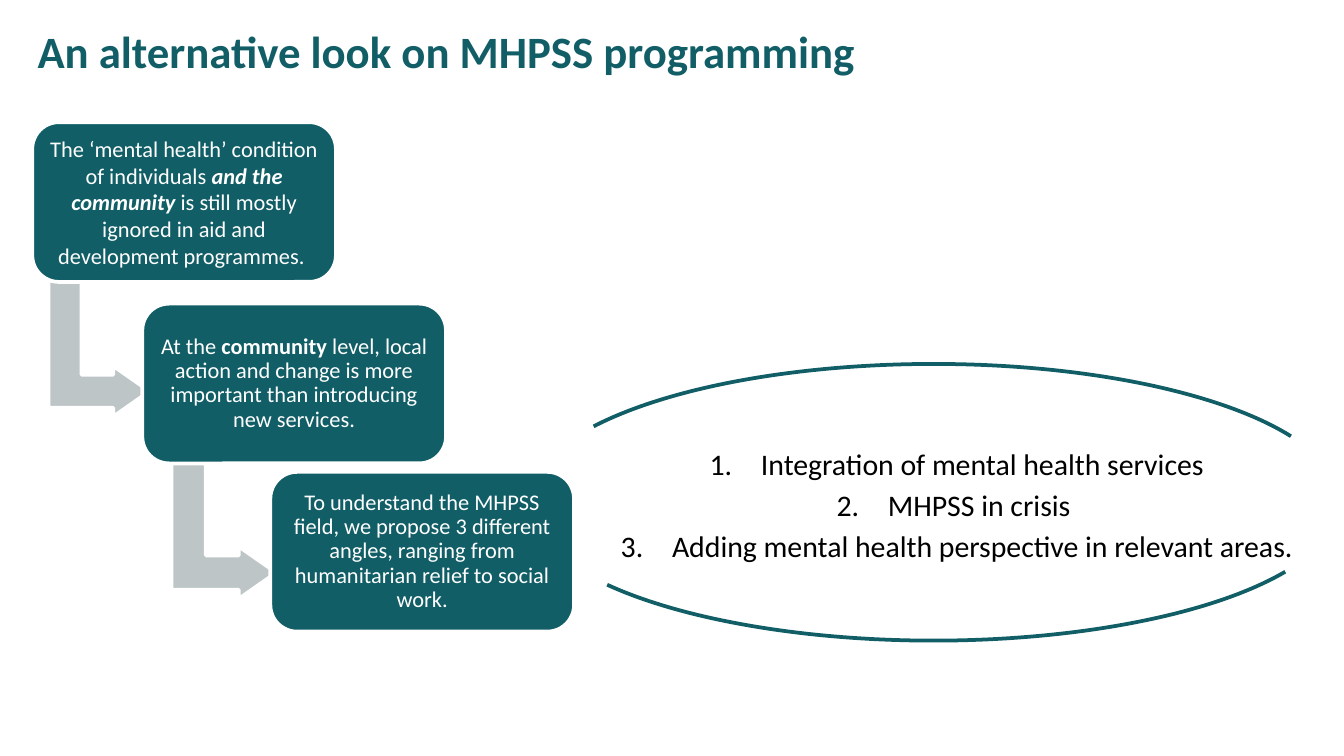
from dataclasses import dataclass

from lxml.etree import SubElement
from pptx import Presentation
from pptx.dml.color import RGBColor
from pptx.enum.shapes import MSO_SHAPE
from pptx.enum.text import MSO_ANCHOR, MSO_AUTO_SIZE, PP_ALIGN
from pptx.oxml.ns import qn
from pptx.util import Cm, Pt

TITLE = "An alternative look on MHPSS programming"

# Each step: left and top in cm, line spacing, runs of (text, style)
STEPS = [
    (0.61, 2.31, 1.0, [
        ("The ‘mental health’ condition of individuals ", ""),
        ("and the community ", "bold italic"),
        ("is still mostly ignored in aid and development programmes. ", ""),
    ]),
    (2.69, 5.74, 0.9, [
        ("At the ", ""),
        ("community ", "bold"),
        ("level, local action and change is more important than introducing new services.", ""),
    ]),
    (5.11, 8.92, 0.9, [
        ("To understand the MHPSS field, we propose 3 different angles, "
         "ranging from humanitarian relief to social work.", ""),
    ]),
]
STEP_SIZE = (5.74, 3.02)

# Frames before the quarter turn: left, top, width, height in cm
ARROWS = [(0.56, 5.61, 2.62, 1.91), (2.92, 9.02, 2.62, 1.98)]
ARROW_SHAPE = (0.328, 0.25, 0.358)

ANGLES = [
    "Integration of mental health services",
    "MHPSS in crisis ",
    "Adding mental health perspective in relevant areas.",
]
ANGLES_FRAME = (6.1, 8.23, 23.09, 2.51)
OVAL_FRAME = (9.96, 6.88, 15.37, 5.23)
OVAL_ARCS = [(192.59, 349.53), (11.18, 165.81)]  # start and end in degrees


@dataclass(frozen=True)
class Theme:
    font: str = "Calibri"
    teal: RGBColor = RGBColor(0x11, 0x5E, 0x67)
    grey: RGBColor = RGBColor(0xBD, 0xC5, 0xC7)
    white: RGBColor = RGBColor(0xFF, 0xFF, 0xFF)
    black: RGBColor = RGBColor(0, 0, 0)
    title_size: Pt = Pt(24)
    list_size: Pt = Pt(16)
    step_size: Pt = Pt(12)
    line_width: Pt = Pt(2)


THEME = Theme()


def to_cm(frame):
    return [Cm(value) for value in frame]


def add_preset(slide, kind, frame, line, fill=None, adjustments=()):
    shape = slide.shapes.add_shape(kind, *to_cm(frame))
    shape.shadow.inherit = False
    for index, value in enumerate(adjustments):
        shape.adjustments[index] = value
    if fill is None:
        shape.fill.background()
    else:
        shape.fill.solid()
        shape.fill.fore_color.rgb = fill
    shape.line.color.rgb = line
    shape.line.width = THEME.line_width
    return shape


def prepare_frame(shape, inset):
    text_frame = shape.text_frame
    text_frame.word_wrap = True
    text_frame.auto_size = MSO_AUTO_SIZE.NONE
    text_frame.vertical_anchor = MSO_ANCHOR.MIDDLE
    text_frame.margin_left = text_frame.margin_right = Cm(inset)
    text_frame.margin_top = text_frame.margin_bottom = Cm(inset)
    return text_frame


def add_run(paragraph, text, size, color, style=""):
    run = paragraph.add_run()
    run.text = text
    run.font.name = THEME.font
    run.font.size = size
    run.font.color.rgb = color
    run.font.bold = "bold" in style
    run.font.italic = "italic" in style


def number_paragraph(paragraph):
    """Give the paragraph an automatic number and a hanging indent."""
    properties = paragraph._p.get_or_add_pPr()
    properties.set("marL", str(Cm(1.85)))
    properties.set("indent", str(-Cm(0.97)))
    SubElement(properties, qn("a:buFont"), typeface="+mj-lt")
    SubElement(properties, qn("a:buAutoNum"), type="arabicPeriod")


def add_title(slide):
    title = slide.shapes.title
    title.left, title.top, title.width, title.height = to_cm((0.71, -0.33, 23.09, 2.59))
    paragraph = prepare_frame(title, 0).paragraphs[0]
    paragraph.alignment = PP_ALIGN.LEFT
    add_run(paragraph, TITLE, THEME.title_size, THEME.teal, "bold")


def add_angles(slide):
    for arc in OVAL_ARCS:
        # Arc adjustments count 60000 units a degree, scaled by 100000
        add_preset(slide, MSO_SHAPE.ARC, OVAL_FRAME, THEME.teal,
                   adjustments=[degrees * 0.6 for degrees in arc])
    box = slide.shapes.add_textbox(*to_cm(ANGLES_FRAME))
    text_frame = prepare_frame(box, 0.03)
    for index, text in enumerate(ANGLES):
        paragraph = text_frame.add_paragraph() if index else text_frame.paragraphs[0]
        paragraph.level = 1
        paragraph.alignment = PP_ALIGN.CENTER
        paragraph.line_spacing = 1.15
        number_paragraph(paragraph)
        add_run(paragraph, text, THEME.list_size, THEME.black)


def add_steps(slide):
    for frame in ARROWS:
        arrow = add_preset(slide, MSO_SHAPE.BENT_UP_ARROW, frame,
                           THEME.white, THEME.grey, ARROW_SHAPE)
        arrow.rotation = 90
    for left, top, spacing, runs in STEPS:
        box = add_preset(slide, MSO_SHAPE.ROUNDED_RECTANGLE, (left, top, *STEP_SIZE),
                         THEME.white, THEME.teal, (0.167,))
        paragraph = prepare_frame(box, 0.13).paragraphs[0]
        paragraph.alignment = PP_ALIGN.CENTER
        paragraph.line_spacing = spacing
        for text, style in runs:
            add_run(paragraph, text, THEME.step_size, THEME.white, style)


def main():
    presentation = Presentation()
    presentation.slide_width, presentation.slide_height = Cm(25.4), Cm(14.29)
    slide = presentation.slides.add_slide(presentation.slide_layouts[5])
    add_angles(slide)
    add_title(slide)
    add_steps(slide)
    presentation.save("out.pptx")


if __name__ == "__main__":
    main()
